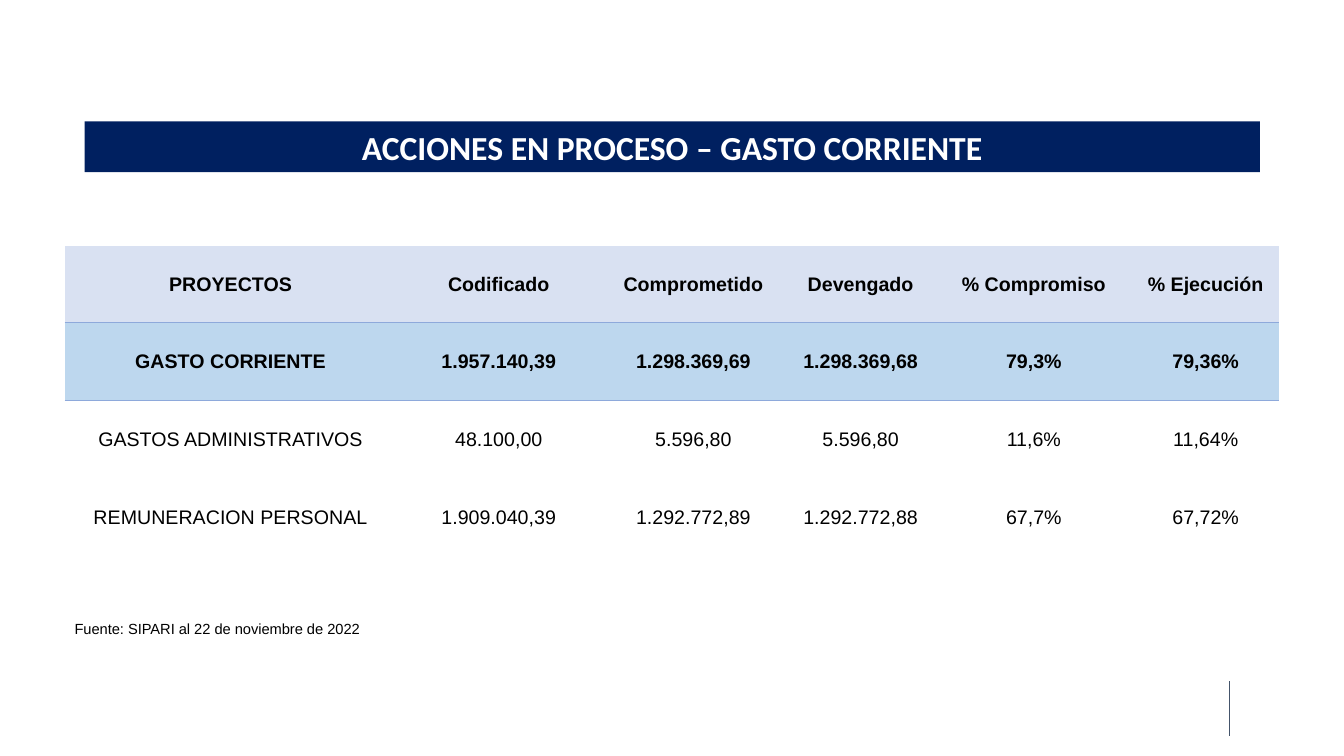
import pptx
import pptx.util
import pptx.dml.color
import pptx.enum.shapes
import pptx.enum.text
import pptx.oxml
import pptx.oxml.ns
from pptx.util import Cm

COLORS = {
    "navy": "002060",
    "white": "FFFFFF",
    "black": "000000",
    "header": "D9E1F2",
    "total": "BDD7EE",
    "rule": "8EA9DB",
    "slate": "44546A",
}
CENTER = pptx.enum.text.PP_ALIGN.CENTER
MIDDLE = pptx.enum.text.MSO_ANCHOR.MIDDLE


def rgb(name):
    return pptx.dml.color.RGBColor.from_string(COLORS[name])


def write(paragraph, text, size, font, color, bold=False):
    run = paragraph.add_run()
    run.text = text
    run.font.size = pptx.util.Pt(size)
    run.font.name = font
    run.font.bold = bold
    run.font.color.rgb = rgb(color)


deck = pptx.Presentation()
deck.slide_width = Cm(33.87)
deck.slide_height = Cm(19.05)
slide = deck.slides.add_slide(deck.slide_layouts[5])

margin_mark = slide.shapes.add_connector(
    pptx.enum.shapes.MSO_CONNECTOR.STRAIGHT, Cm(30.99), Cm(18.54), Cm(30.99), Cm(17.15))
margin_mark.line.color.rgb = rgb("slate")
margin_mark.line.width = pptx.util.Pt(0.75)
margin_mark.element.spPr.append(pptx.oxml.parse_xml(
    f'<a:effectLst {pptx.oxml.ns.nsdecls("a")}/>'))

heading = slide.shapes.title
heading.left, heading.top, heading.width, heading.height = Cm(2.13), Cm(3.06), Cm(29.62), Cm(1.28)
heading.fill.solid()
heading.fill.fore_color.rgb = rgb("navy")
heading.text_frame.auto_size = pptx.enum.text.MSO_AUTO_SIZE.NONE
heading.text_frame.vertical_anchor = MIDDLE
heading.text_frame.paragraphs[0].alignment = CENTER
write(heading.text_frame.paragraphs[0], "ACCIONES EN PROCESO – GASTO CORRIENTE",
      24, "Calibri", "white", True)

spending = [
    ["PROYECTOS", "Codificado", "Comprometido", "Devengado", "% Compromiso", "% Ejecución"],
    ["GASTO CORRIENTE", "1.957.140,39", "1.298.369,69", "1.298.369,68", "79,3%", "79,36%"],
    ["GASTOS ADMINISTRATIVOS", "48.100,00", "5.596,80", "5.596,80", "11,6%", "11,64%"],
    ["REMUNERACION PERSONAL", "1.909.040,39", "1.292.772,89", "1.292.772,88", "67,7%", "67,72%"],
]
column_widths = [8.36, 5.16, 4.65, 3.78, 4.95, 3.71]
row_heights = [1.93, 1.96, 1.96, 1.96]
row_fills = ["header", "total", None, None]
ruled_edges = [["lnB"], ["lnT", "lnB"], ["lnT"], []]

budget = slide.shapes.add_table(
    len(spending), len(column_widths), Cm(1.63), Cm(6.2),
    Cm(sum(column_widths)), Cm(sum(row_heights))).table
budget.first_row = False
budget.horz_banding = False
for column, width in zip(budget.columns, column_widths):
    column.width = Cm(width)

for row, height, values, fill, ruled in zip(
        budget.rows, row_heights, spending, row_fills, ruled_edges):
    row.height = Cm(height)
    for cell, value in zip(row.cells, values):
        cell.margin_left = cell.margin_right = cell.margin_top = Cm(0.03)
        cell.margin_bottom = 0
        cell.vertical_anchor = MIDDLE
        for edge in ["lnL", "lnR", "lnT", "lnB"]:
            stroke = "<a:noFill/>"
            if edge in ruled:
                stroke = f'<a:solidFill><a:srgbClr val="{COLORS["rule"]}"/></a:solidFill>'
            cell._tc.get_or_add_tcPr().append(pptx.oxml.parse_xml(
                f'<a:{edge} {pptx.oxml.ns.nsdecls("a")} w="6350">{stroke}</a:{edge}>'))
        if fill:
            cell.fill.solid()
            cell.fill.fore_color.rgb = rgb(fill)
        else:
            cell.fill.background()
        paragraph = cell.text_frame.paragraphs[0]
        paragraph.alignment = CENTER
        write(paragraph, value, 14, "Arial", "black", fill is not None)

source_note = slide.shapes.add_textbox(Cm(1.63), Cm(15.49), Cm(16.94), Cm(0.74))
source_note.text_frame.word_wrap = True
write(source_note.text_frame.paragraphs[0], "Fuente: SIPARI al 22 de noviembre de 2022",
      10.5, "Arial", "black")

deck.save("out.pptx")
